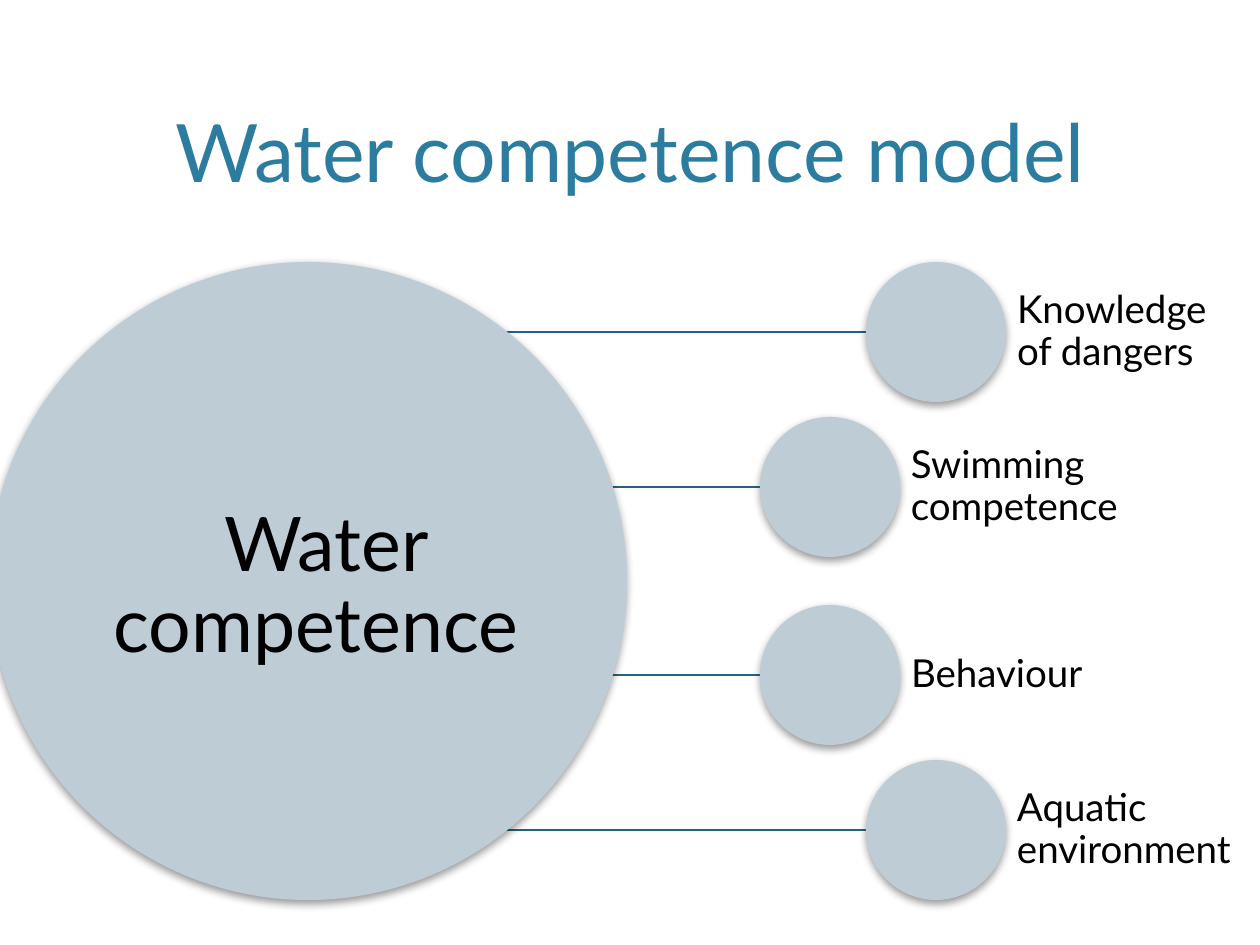
"""Build the water competence model slide."""
from lxml import etree
from pptx import Presentation, util as u
from pptx.dml.color import RGBColor
from pptx.enum import shapes, text
from pptx.oxml.ns import qn

PX = 914400 / 126
DISC, SMALL, INSET = "BECCD6", 140, 11
HUB_X, HUB_Y, HUB_SIZE = -11, 262, 638


def px(*lengths):
    return [u.Emu(round(n * PX)) for n in lengths]


def add_text(s, words, box, size, color="000000", align="LEFT", anchor="MIDDLE", inset=0, spacing=0.9):
    tf = s.shapes.add_textbox(*px(*box)).text_frame
    tf.word_wrap = True
    tf.vertical_anchor = text.MSO_ANCHOR[anchor]
    tf.margin_left, tf.margin_right = px(inset, inset)
    tf.margin_top = tf.margin_bottom = 0
    p = tf.paragraphs[0]
    p.alignment = text.PP_ALIGN[align]
    p.line_spacing = spacing
    r = p.add_run()
    r.text = words
    r.font.name = "Lato"
    r.font.size = u.Pt(size)
    r.font.color.rgb = RGBColor.from_string(color)


prs = Presentation()
prs.slide_width, prs.slide_height = px(1260, 945)
s = prs.slides.add_slide(prs.slide_layouts[6])

add_text(s, "Water competence model", (76, 15, 1108, 184), 46, color="2C7C9F",
         align="CENTER", anchor="BOTTOM", inset=12, spacing=1.0)

branches = [
    ("Knowledge of dangers", 866, 262, 222),
    ("Swimming competence", 760, 417, 251),
    ("Behaviour", 760, 605, 210),
    ("Aquatic environment", 866, 760, 251),
]

hub_center = HUB_X + HUB_SIZE // 2
for label, x, y, width in branches:
    mid = y + SMALL // 2
    line = s.shapes.add_connector(shapes.MSO_CONNECTOR.STRAIGHT, *px(hub_center, mid, x + SMALL // 2, mid))
    line.line.color.rgb = RGBColor.from_string("23637F")
    line.line.width = u.Pt(1)
    etree.SubElement(line._element.spPr, qn("a:effectLst"))

discs = [(HUB_X, HUB_Y, HUB_SIZE)] + [(x, y, SMALL) for label, x, y, width in branches]
for x, y, size in discs:
    sp = s.shapes.add_shape(shapes.MSO_SHAPE.OVAL, *px(x, y, size, size))
    sp.fill.solid()
    sp.fill.fore_color.rgb = RGBColor.from_string(DISC)
    sp.line.fill.background()
    sp.shadow.inherit = False
    effects = sp._element.spPr.find(qn("a:effectLst"))
    shadow = etree.SubElement(effects, qn("a:outerShdw"), blurRad=str(u.Pt(5)), dist=str(u.Pt(2)),
                              dir="5400000", rotWithShape="0")
    black = etree.SubElement(shadow, qn("a:srgbClr"), val="000000")
    etree.SubElement(black, qn("a:alpha"), val="40000")

add_text(s, "Water competence ", (101, 459, 449, 210), 43, align="CENTER", anchor="BOTTOM")
for label, x, y, width in branches:
    add_text(s, label, (x + SMALL, y, width, SMALL), 22, inset=INSET)

prs.save("out.pptx")
